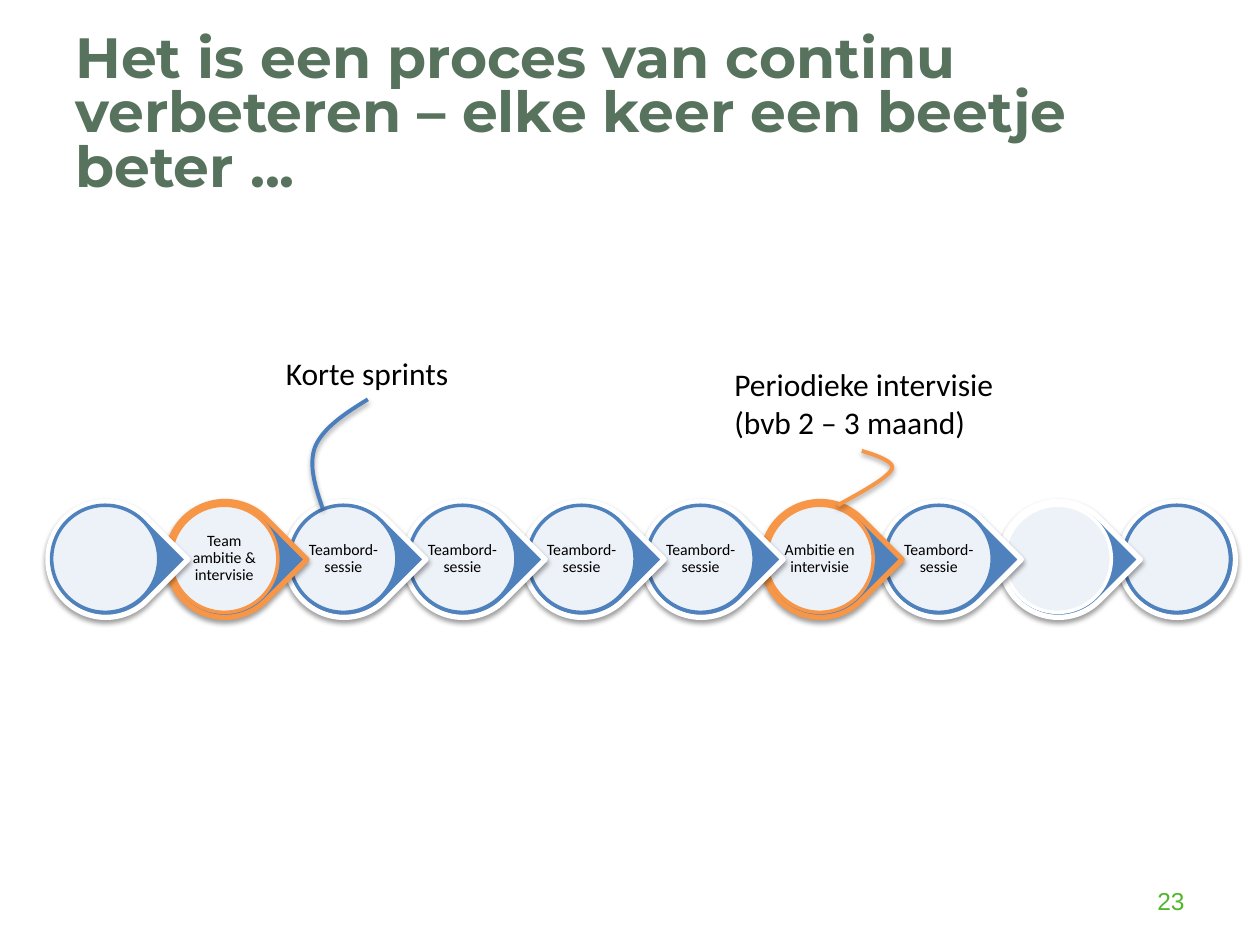
"""Build the slide that shows continuous improvement as a chain of team sessions."""
from dataclasses import dataclass

from lxml import etree
from pptx import Presentation
from pptx import util as u
from pptx.dml.color import RGBColor
from pptx.enum import shapes, text
from pptx.oxml.ns import qn


@dataclass(frozen=True)
class Theme:
    blue: str = "4F81BD"
    curve_blue: str = "4B7EBC"
    orange: str = "F79646"
    white: str = "FFFFFF"
    black: str = "000000"
    title_green: str = "58735D"
    number_green: str = "52B62C"
    heading_font: str = "Montserrat"
    body_font: str = "Calibri"
    number_font: str = "Arial"
    title_size: float = 32.4
    label_size: float = 18
    number_size: float = 14
    step_size: float = 9


class SlideBuilder:
    def __init__(self, page, theme):
        self.page = page
        self.theme = theme

    def add_label(self, at, lines, size, color, font=None, bold=False, wrap=True, inset=None,
                  align=text.PP_ALIGN.LEFT, anchor=text.MSO_ANCHOR.MIDDLE, spacing=None):
        box = self.page.shapes.add_textbox(*map(u.Inches, at))
        frame = box.text_frame
        frame.word_wrap = wrap
        frame.vertical_anchor = anchor
        if not wrap:
            frame.auto_size = text.MSO_AUTO_SIZE.SHAPE_TO_FIT_TEXT
        if inset is not None:
            frame.margin_left = frame.margin_right = u.Inches(inset)
            frame.margin_top = frame.margin_bottom = u.Inches(inset)
        for index, line in enumerate(lines):
            para = frame.add_paragraph() if index else frame.paragraphs[0]
            para.alignment = align
            para.line_spacing = spacing
            span = para.add_run()
            span.text = line
            span.font.size = u.Pt(size)
            span.font.name = font or self.theme.body_font
            span.font.bold = bold
            span.font.color.rgb = RGBColor.from_string(color)

    def outline(self, shape, color, width):
        shape.shadow.inherit = False
        shape.line.color.rgb = RGBColor.from_string(color)
        shape.line.width = u.Pt(width)

    def cast_shadow(self, shape, opacity, distance):
        effects = shape._element.spPr.find(qn("a:effectLst"))
        shadow = etree.SubElement(effects, qn("a:outerShdw"), blurRad=str(u.Pt(3.1)),
                                  dist=str(u.Pt(distance)), dir="5400000", rotWithShape="0")
        color = etree.SubElement(shadow, qn("a:srgbClr"), val=self.theme.black)
        etree.SubElement(color, qn("a:alpha"), val=str(opacity * 1000))

    def solid(self, kind, left, top, size, fill, line, width):
        shape = self.page.shapes.add_shape(kind, *map(u.Inches, (left, top, size, size)))
        shape.fill.solid()
        shape.fill.fore_color.rgb = RGBColor.from_string(fill)
        self.outline(shape, line, width)
        return shape

    def step(self, left, top, label, rim, ring, last):
        kinds = shapes.MSO_SHAPE
        kind = kinds.OVAL if last else kinds.TEAR
        drop = self.solid(kind, left, top, 0.92, self.theme.blue, rim, 3)
        drop.rotation = 0 if last else 45
        self.cast_shadow(drop, 38, 1.6)
        disc = self.solid(kinds.OVAL, left + 0.03, top + 0.03, 0.85, self.theme.white, ring, 2)
        color = disc._element.spPr.find(qn("a:solidFill"))[0]
        etree.SubElement(color, qn("a:alpha"), val="90000")
        if label:
            self.add_label((left + 0.15, top + 0.15, 0.61, 0.61), [label], self.theme.step_size,
                           self.theme.black, inset=0.01, align=text.PP_ALIGN.CENTER, spacing=0.9)

    def curve(self, start, segments, color, pieces=16):
        points, current = [], start
        for first, second, end in segments:
            for piece in range(1, pieces + 1):
                t = piece / pieces
                weights = ((1 - t) ** 3, 3 * t * (1 - t) ** 2, 3 * t * t * (1 - t), t ** 3)
                corners = (current, first, second, end)
                points.append(tuple(u.Inches(sum(w * c[axis] for w, c in zip(weights, corners)))
                                    for axis in (0, 1)))
            current = end
        builder = self.page.shapes.build_freeform(*map(u.Inches, start))
        builder.add_line_segments(points, close=False)
        shape = builder.convert_to_shape()
        shape.fill.background()
        self.outline(shape, color, 2.25)
        self.cast_shadow(shape, 35, 1.8)


def main():
    deck = Presentation()
    deck.slide_width, deck.slide_height = u.Inches(10), u.Inches(7.5)
    theme = Theme()
    slide = SlideBuilder(deck.slides.add_slide(deck.slide_layouts[6]), theme)

    slide.add_label((0.5, 0.3, 8.23, 1.25),
                    ["Het is een proces van continu verbeteren – elke keer een beetje beter ..."],
                    theme.title_size, theme.title_green, theme.heading_font, bold=True,
                    spacing=0.8)

    session = ("Teambord-sessie", theme.white, theme.blue)
    unnamed = ("", theme.white, theme.blue)
    steps = [unnamed, ("Team ambitie & intervisie", theme.orange, theme.orange),
             *[session] * 4, ("Ambitie en intervisie", theme.orange, theme.orange),
             session, ("", theme.white, theme.white), unnamed]
    for index, (label, rim, ring) in reversed(list(enumerate(steps))):
        slide.step(0.38 + 0.945 * index, 3.98, label, rim, ring, index == len(steps) - 1)

    slide.add_label((7.17, 6.95, 2.33, 0.4), ["23"], theme.number_size, theme.number_green,
                    theme.number_font, align=text.PP_ALIGN.RIGHT)

    callouts = [
        ((2.17, 2.76, 1.51, 0.4), ["Korte sprints"], theme.curve_blue, (2.56, 4.03),
         [((2.5, 3.86), (2.45, 3.69), (2.5, 3.55)), ((2.56, 3.4), (2.74, 3.28), (2.92, 3.17))]),
        ((5.73, 2.85, 2.28, 0.71), ["Periodieke intervisie", "(bvb 2 – 3 maand)"],
         theme.orange, (6.65, 4.01),
         [((6.85, 3.9), (7.05, 3.79), (7.08, 3.72)), ((7.11, 3.65), (6.84, 3.58), (6.84, 3.58))]),
    ]
    for at, lines, color, start, segments in callouts:
        slide.add_label(at, lines, theme.label_size, theme.black, wrap=False,
                        anchor=text.MSO_ANCHOR.TOP)
        slide.curve(start, segments, color)

    deck.save("out.pptx")


if __name__ == "__main__":
    main()
